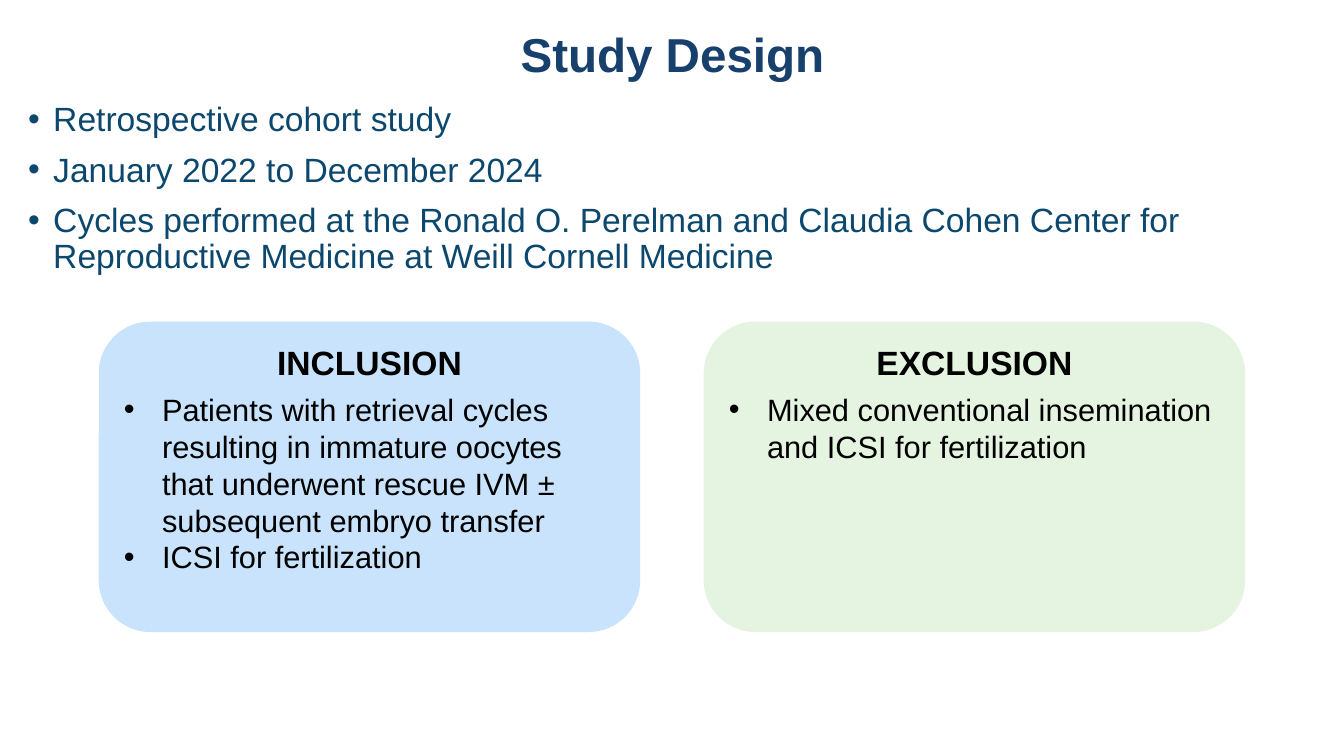
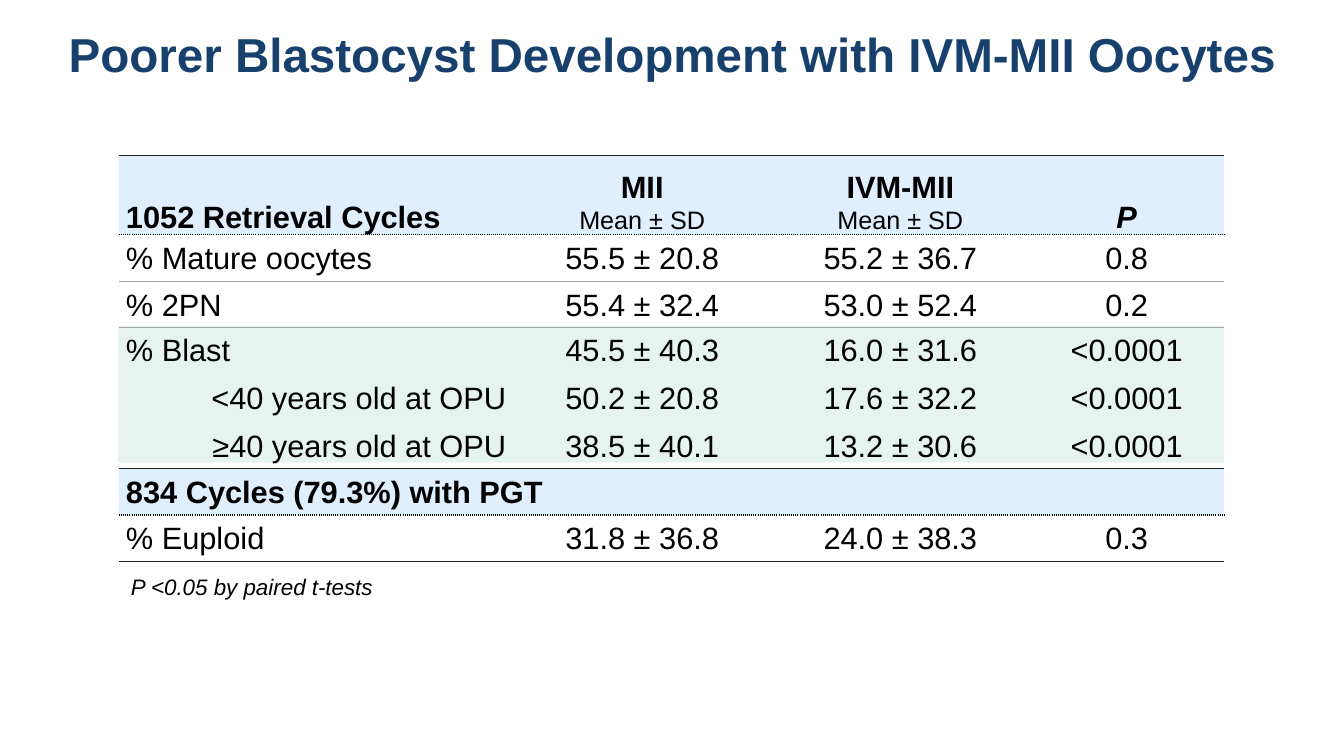
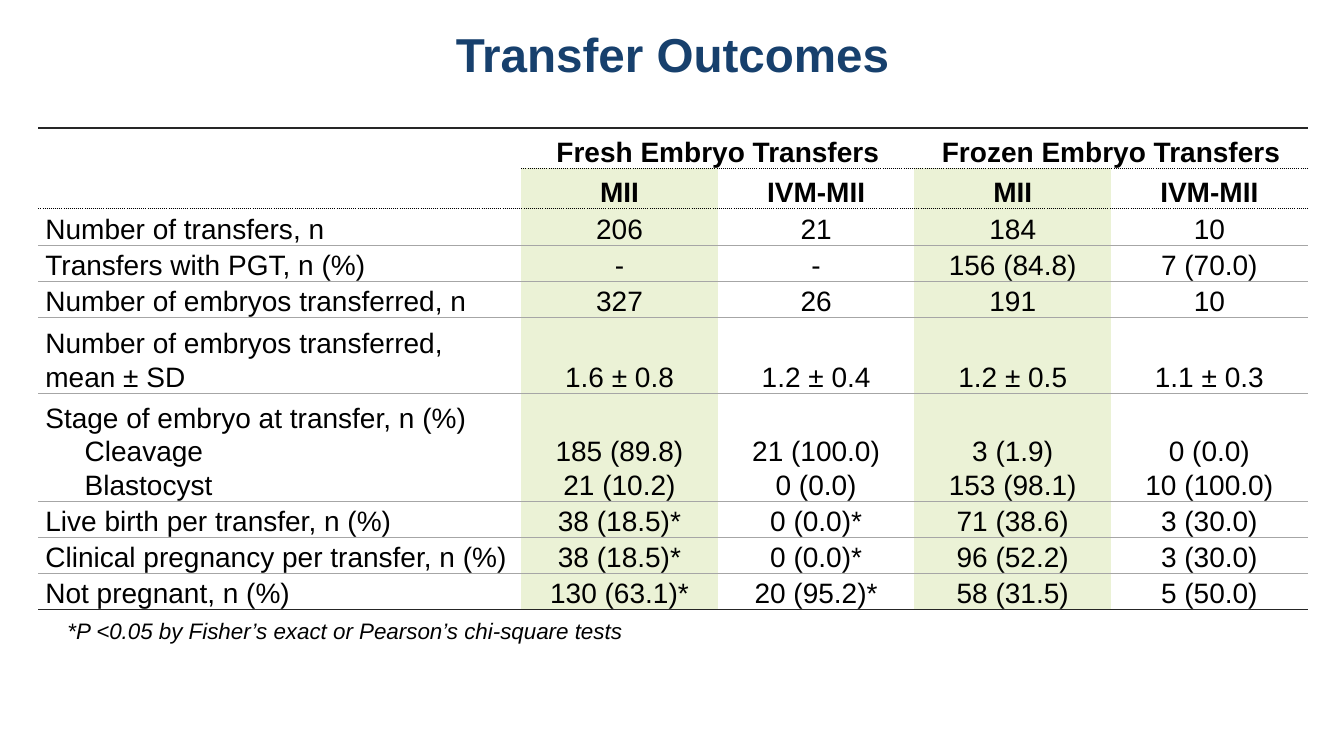
from lxml import etree
from pptx import Presentation
from pptx.dml.color import RGBColor as Rgb
from pptx.enum.shapes import MSO_SHAPE as Shape
from pptx.enum.text import MSO_ANCHOR as Anchor, PP_ALIGN as Align
from pptx.oxml.ns import qn
from pptx.util import Inches, Pt

FONT = "Arial"
NO_STYLE = "{2D5ABB26-0587-4C30-8999-92F81FD0307C}"
HEX = {
    "title": "17406D", "body": "0C486E", "text": "000000",
    "blue": "C8E3FB", "green": "E5F4E0", "head": "DFEFFD",
    "mark": "0C9B74", "lime": "EBF2D6", "dark": "262626", "grey": "A6A6A6",
}
# colour, width in points, dash
EDGE = {
    "dark": ("dark", 1, "solid"),
    "dot": ("text", 1, "sysDot"),
    "grey": ("grey", 0.5, "solid"),
}


def paint(fill, name, alpha=100):
    fill.solid()
    fill.fore_color.rgb = Rgb.from_string(HEX[name])
    if alpha < 100:
        color = fill._xPr.find(".//" + qn("a:srgbClr"))
        etree.SubElement(color, qn("a:alpha")).set("val", str(alpha * 1000))


def style(para, size, color="text", bold=False, italic=False,
          align=Align.LEFT, line=1.0):
    para.alignment = align
    para.line_spacing = line
    for run in para.runs:
        font = run.font
        font.name, font.size = FONT, Pt(size)
        font.bold, font.italic = bold, italic
        font.color.rgb = Rgb.from_string(HEX[color])


def indent(para, left, first=0):
    props = para._p.get_or_add_pPr()
    props.set("marL", str(Inches(left)))
    props.set("indent", str(Inches(first)))
    return props


def bullet(para, hang):
    props = indent(para, hang, -hang)
    etree.SubElement(props, qn("a:buFont")).set("typeface", FONT)
    etree.SubElement(props, qn("a:buChar")).set("char", "•")


def label(slide, box, text, size, anchor=Anchor.TOP, **look):
    frame = slide.shapes.add_textbox(*map(Inches, box)).text_frame
    frame.word_wrap = True
    frame.vertical_anchor = anchor
    frame.text = text
    for para in frame.paragraphs:
        style(para, size, **look)
    return frame


def page(deck, title):
    slide = deck.slides.add_slide(deck.slide_layouts[6])
    label(slide, (0.19, 0.2, 12.96, 0.74), title, 34, Anchor.MIDDLE,
          color="title", bold=True, align=Align.CENTER, line=0.9)
    return slide


def panel(slide, box, kind, fill, alpha=100):
    shape = slide.shapes.add_shape(kind, *map(Inches, box))
    shape.shadow.inherit = False
    paint(shape.fill, fill, alpha)
    shape.line.fill.background()
    return shape


def card(slide, box, fill, head, items):
    frame = panel(slide, box, Shape.ROUNDED_RECTANGLE, fill).text_frame
    frame.word_wrap = True
    frame.vertical_anchor = Anchor.TOP
    frame.text = "\n".join([head, *items])
    first, *rest = frame.paragraphs
    style(first, 24, bold=True, align=Align.CENTER)
    first.space_after = Pt(6)
    for para in rest:
        bullet(para, 0.38)
        style(para, 22)


def border(cell, side, kind):
    props = cell._tc.get_or_add_tcPr()
    line = etree.SubElement(props, qn("a:ln" + side))
    if kind is None:
        line.set("w", "0")
        etree.SubElement(line, qn("a:noFill"))
        return
    color, width, dash = EDGE[kind]
    line.set("w", str(Pt(width)))
    solid = etree.SubElement(line, qn("a:solidFill"))
    etree.SubElement(solid, qn("a:srgbClr")).set("val", HEX[color])
    etree.SubElement(line, qn("a:prstDash")).set("val", dash)


def grid(slide, spot, widths, heights, rows, edges, size, heads):
    """Place a table; edges names each rule from top to bottom."""
    box = (*spot, sum(widths), sum(heights))
    frame = slide.shapes.add_table(len(rows), len(widths), *map(Inches, box))
    table = frame.table
    table.first_row = table.horz_banding = False
    table._tbl.tblPr.find(qn("a:tableStyleId")).text = NO_STYLE
    for col, width in zip(table.columns, widths):
        col.width = Inches(width)
    for r, (row, height) in enumerate(zip(rows, heights)):
        table.rows[r].height = Inches(height)
        for c, text in enumerate(row):
            cell = table.cell(r, c)
            cell.margin_left = cell.margin_right = Inches(0.07)
            cell.margin_top = cell.margin_bottom = 0
            cell.vertical_anchor = Anchor.BOTTOM
            for side, kind in zip("LRTB", (None, None, *edges[r:r + 2])):
                border(cell, side, kind)
            cell.fill.background()
            cell.text_frame.text = text
            for para in cell.text_frame.paragraphs:
                style(para, size, bold=r in heads, line=1.07,
                      align=Align.CENTER if c else Align.LEFT)
    return table


def design(deck):
    slide = page(deck, "Study Design")
    points = [
        "Retrospective cohort study",
        "January 2022 to December 2024",
        "Cycles performed at the Ronald O. Perelman and Claudia Cohen Center "
        "for Reproductive Medicine at Weill Cornell Medicine",
    ]
    frame = label(slide, (0.18, 0.97, 12.96, 1.79), "\n".join(points), 24,
                  color="body", line=0.9)
    for i, para in enumerate(frame.paragraphs):
        if i:
            para.space_before = Pt(10)
        bullet(para, 0.25)
    cards = [
        ("blue", "INCLUSION", [
            "Patients with retrieval cycles resulting in immature oocytes "
            "that underwent rescue IVM ± subsequent embryo transfer",
            "ICSI for fertilization"]),
        ("green", "EXCLUSION", [
            "Mixed conventional insemination and ICSI for fertilization"]),
    ]
    for i, parts in enumerate(cards):
        card(slide, (0.98 + 6 * i, 3.19, 5.37, 3.08), *parts)


def growth(deck):
    slide = page(deck, "Poorer Blastocyst Development with IVM-MII Oocytes")
    panel(slide, (1.17, 3.23, 10.97, 1.36), Shape.RECTANGLE, "mark", 10)
    rows = [
        ("1052 Retrieval Cycles", "MII\nMean ± SD", "IVM-MII\nMean ± SD", "P"),
        ("% Mature oocytes", "55.5 ± 20.8", "55.2 ± 36.7", "0.8"),
        ("% 2PN", "55.4 ± 32.4", "53.0 ± 52.4", "0.2"),
        ("% Blast\n<40 years old at OPU\n≥40 years old at OPU",
         "45.5 ± 40.3\n50.2 ± 20.8\n38.5 ± 40.1",
         "16.0 ± 31.6\n17.6 ± 32.2\n13.2 ± 30.6",
         "<0.0001\n<0.0001\n<0.0001"),
        ("834 Cycles (79.3%) with PGT", "", "", ""),
        ("% Euploid", "31.8 ± 36.8", "24.0 ± 38.3", "0.3"),
    ]
    heads = (0, 4)
    table = grid(slide, (1.18, 1.54), (3.91, 2.56, 2.56, 1.93),
                 (0.79, 0.46, 0.46, 1.36, 0.46, 0.46), rows,
                 ("dark", "dot", "grey", "grey", "dark", "dot", "dark"),
                 22, heads)
    for r in range(len(rows)):
        for c in range(4):
            cell = table.cell(r, c)
            if r in heads:
                paint(cell.fill, "head", 70)
            if r:
                cell.vertical_anchor = Anchor.MIDDLE
                for para in cell.text_frame.paragraphs:
                    para.space_after = Pt(8)
    for c in (1, 2):
        style(table.cell(0, c).text_frame.paragraphs[1], 18,
              align=Align.CENTER, line=1.07)
    table.cell(0, 3).text_frame.paragraphs[0].runs[0].font.italic = True
    for para in table.cell(3, 0).text_frame.paragraphs[1:]:
        para.alignment = Align.RIGHT
    table.cell(4, 0).merge(table.cell(4, 3))
    label(slide, (1.2, 5.64, 2.8, 0.37), "P <0.05 by paired t-tests", 16,
          italic=True)


def outcome(deck):
    slide = page(deck, "Transfer Outcomes")
    rows = [
        ("", "Fresh Embryo Transfers", "", "Frozen Embryo Transfers", ""),
        ("", "MII", "IVM-MII", "MII", "IVM-MII"),
        ("Number of transfers, n", "206", "21", "184", "10"),
        ("Transfers with PGT, n (%)", "-", "-", "156 (84.8)", "7 (70.0)"),
        ("Number of embryos transferred, n", "327", "26", "191", "10"),
        ("Number of embryos transferred, mean ± SD",
         "1.6 ± 0.8", "1.2 ± 0.4", "1.2 ± 0.5", "1.1 ± 0.3"),
        ("Stage of embryo at transfer, n (%)\nCleavage\nBlastocyst",
         "185 (89.8)\n21 (10.2)", "21 (100.0)\n0 (0.0)",
         "3 (1.9)\n153 (98.1)", "0 (0.0)\n10 (100.0)"),
        ("Live birth per transfer, n (%)",
         "38 (18.5)*", "0 (0.0)*", "71 (38.6)", "3 (30.0)"),
        ("Clinical pregnancy per transfer, n (%)",
         "38 (18.5)*", "0 (0.0)*", "96 (52.2)", "3 (30.0)"),
        ("Not pregnant, n (%)",
         "130 (63.1)*", "20 (95.2)*", "58 (31.5)", "5 (50.0)"),
    ]
    table = grid(slide, (0.38, 1.27), [4.79] + [1.95] * 4,
                 [0.4] * 2 + [0.36] * 3 + [0.75, 1] + [0.36] * 3, rows,
                 ["dark", "dot", "dot"] + ["grey"] * 7 + ["dark"],
                 20, (0, 1))
    for c in (1, 3):
        table.cell(0, c).merge(table.cell(0, c + 1))
        for r in range(1, len(rows)):
            paint(table.cell(r, c).fill, "lime")
    for r, side in enumerate("BT"):
        props = table.cell(r, 0)._tc.tcPr
        props.remove(props.find(qn("a:ln" + side)))
    for para in table.cell(6, 0).text_frame.paragraphs[1:]:
        indent(para, 0.39)
    label(slide, (0.57, 6.07, 5.9, 0.37),
          "*P <0.05 by Fisher’s exact or Pearson’s chi-square tests", 16,
          italic=True)


def main():
    deck = Presentation()
    deck.slide_width, deck.slide_height = Inches(13.33), Inches(7.5)
    for build in (design, growth, outcome):
        build(deck)
    deck.save("out.pptx")


if __name__ == "__main__":
    main()
